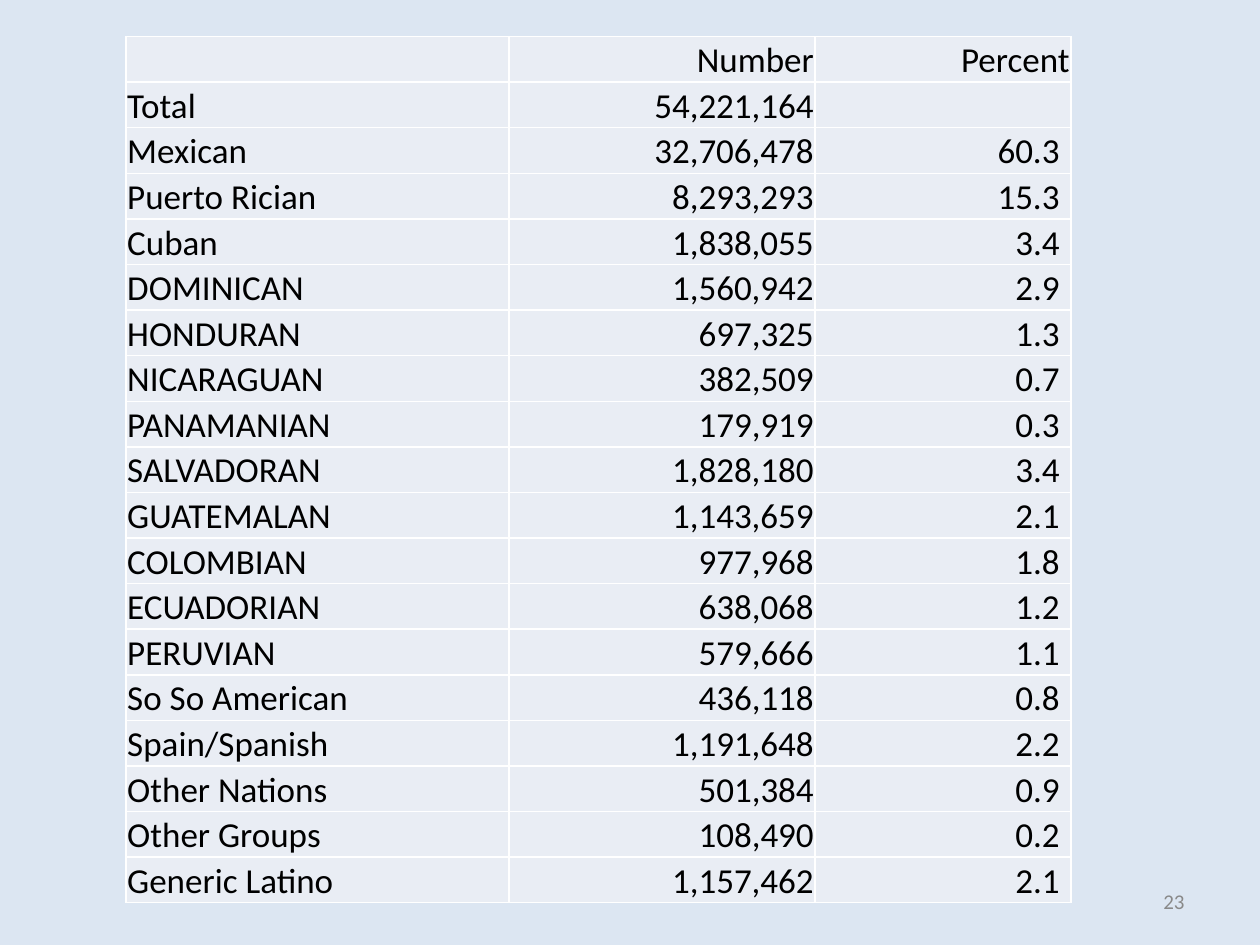
from lxml import etree
from pptx import Presentation
from pptx import util as u
from pptx.dml.color import RGBColor
from pptx.enum import text
from pptx.oxml import ns

BACKGROUND = RGBColor(0xDC, 0xE6, 0xF2)
CELL_FILL = RGBColor(0xE9, 0xED, 0xF4)
BORDER = RGBColor(0xFF, 0xFF, 0xFF)
INK = RGBColor(0x00, 0x00, 0x00)
GREY = RGBColor(0x89, 0x89, 0x89)

WIDTH, HEIGHT = u.Inches(10), u.Inches(7.5)
COLUMN_SHARES = (3.04, 2.43, 2.03)
ALIGNMENTS = (text.PP_ALIGN.LEFT, text.PP_ALIGN.RIGHT, text.PP_ALIGN.RIGHT)

ROWS = (
    ("", "Number", "Percent"),
    ("Total", "54,221,164", ""),
    ("Mexican", "32,706,478", "60.3"),
    ("Puerto Rician", "8,293,293", "15.3"),
    ("Cuban", "1,838,055", "3.4"),
    ("DOMINICAN", "1,560,942", "2.9"),
    ("HONDURAN", "697,325", "1.3"),
    ("NICARAGUAN", "382,509", "0.7"),
    ("PANAMANIAN", "179,919", "0.3"),
    ("SALVADORAN", "1,828,180", "3.4"),
    ("GUATEMALAN", "1,143,659", "2.1"),
    ("COLOMBIAN", "977,968", "1.8"),
    ("ECUADORIAN", "638,068", "1.2"),
    ("PERUVIAN", "579,666", "1.1"),
    ("So So American", "436,118", "0.8"),
    ("Spain/Spanish", "1,191,648", "2.2"),
    ("Other Nations", "501,384", "0.9"),
    ("Other Groups", "108,490", "0.2"),
    ("Generic Latino", "1,157,462", "2.1"),
)


def set_values(target, values):
    for name, value in values.items():
        setattr(target, name, value)


def write(para, words, size, color, alignment):
    para.alignment = alignment
    if words:
        span = para.add_run()
        span.text = words
        set_values(span.font, {"name": "Calibri", "size": u.Pt(size)})
        span.font.color.rgb = color


def add_borders(cell):
    properties = cell._tc.get_or_add_tcPr()
    for side in ("a:lnL", "a:lnR", "a:lnT", "a:lnB"):
        line = etree.SubElement(properties, ns.qn(side), w=str(u.Pt(1)))
        fill = etree.SubElement(line, ns.qn("a:solidFill"))
        etree.SubElement(fill, ns.qn("a:srgbClr"), val=str(BORDER))


def add_population_table(page, left, top, width, height):
    table = page.shapes.add_table(
        len(ROWS), len(COLUMN_SHARES), left, top, width, height).table
    set_values(table, {"first_row": False, "horz_banding": False})
    for column, share in zip(table.columns, COLUMN_SHARES):
        column.width = int(width * share / sum(COLUMN_SHARES))
    for row in table.rows:
        row.height = int(height / len(ROWS))

    for r, values in enumerate(ROWS):
        for c, words in enumerate(values):
            cell = table.cell(r, c)
            # Percentages sit a little in from the right edge
            inset = 0.09 if c == 2 and r > 0 else 0.01
            set_values(cell, {
                "margin_left": u.Inches(0.01),
                "margin_top": u.Inches(0.01),
                "margin_right": u.Inches(inset),
                "margin_bottom": 0,
                "vertical_anchor": text.MSO_ANCHOR.BOTTOM,
            })
            add_borders(cell)
            cell.fill.solid()
            cell.fill.fore_color.rgb = CELL_FILL
            write(cell.text_frame.paragraphs[0], words, 20, INK, ALIGNMENTS[c])


def add_page_number(page, left, top, width, height):
    frame = page.shapes.add_textbox(left, top, width, height).text_frame
    set_values(frame, {"word_wrap": True,
                       "vertical_anchor": text.MSO_ANCHOR.MIDDLE})
    write(frame.paragraphs[0], "23", 12, GREY, text.PP_ALIGN.RIGHT)


def main():
    deck = Presentation()
    set_values(deck, {"slide_width": WIDTH, "slide_height": HEIGHT})
    page = deck.slides.add_slide(deck.slide_layouts[6])
    page.background.fill.solid()
    page.background.fill.fore_color.rgb = BACKGROUND

    # Population by origin
    add_population_table(page, u.Inches(1), u.Inches(0.29),
                         u.Inches(7.5), u.Inches(6.88))
    # Page number in the lower right corner
    add_page_number(page, u.Inches(7.17), u.Inches(6.95),
                    u.Inches(2.33), u.Inches(0.4))
    deck.save("out.pptx")


if __name__ == "__main__":
    main()
